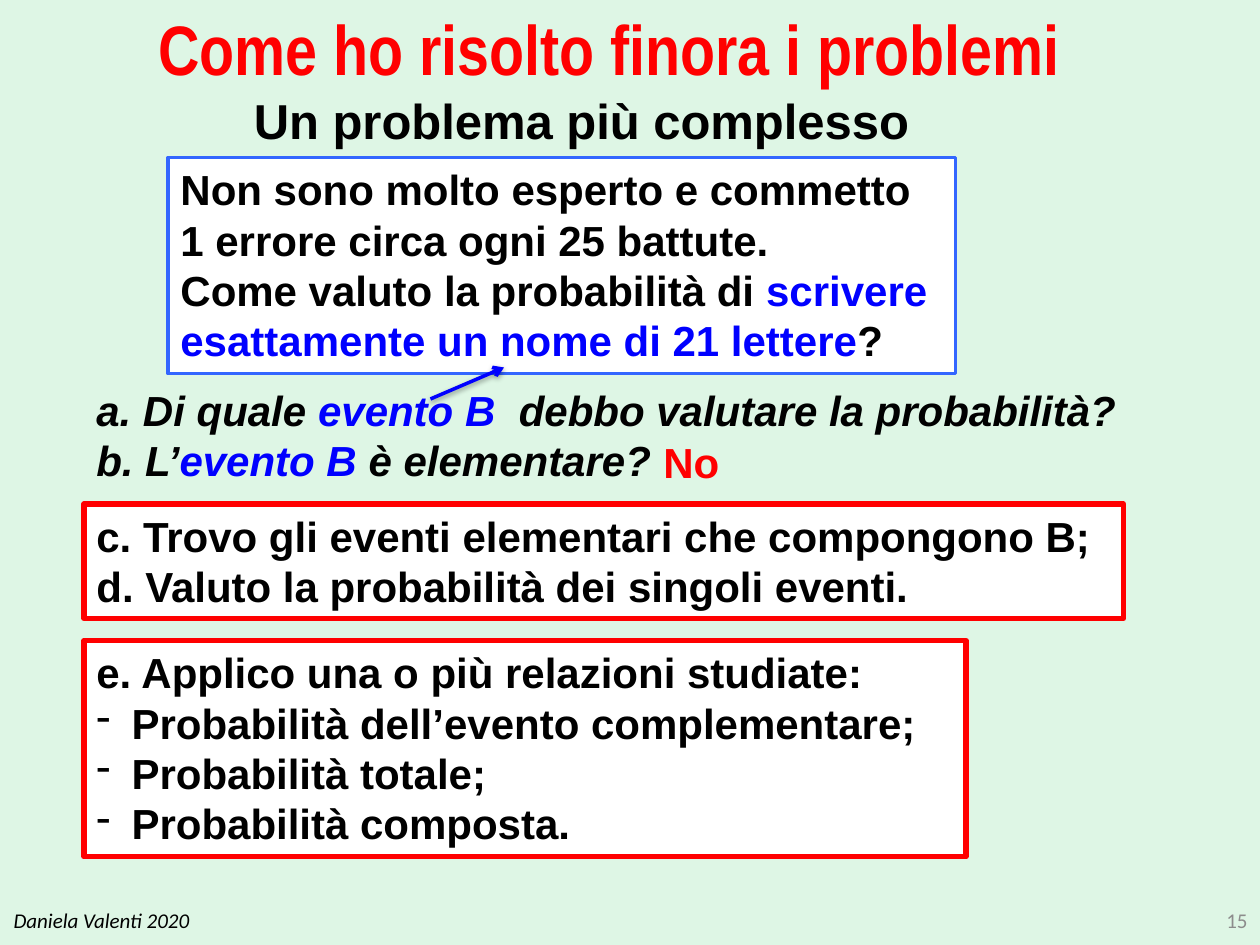
"""Build the slide on how probability problems have been solved so far."""
from lxml import etree
from pptx import Presentation
from pptx import util as u
from pptx.dml.color import RGBColor
from pptx.enum import shapes, text
from pptx.oxml import parse_xml
from pptx.oxml.ns import nsdecls, qn

BLACK, RED, BLUE, WHITE = "000000", "FF0000", "0000FF", "FFFFFF"
BOLD = {"name": "Arial", "size": 24, "bold": True}
ITALIC = {**BOLD, "italic": True}
SMALL = {"name": "Calibri", "size": 12}
HANGING, BULLET = (36, -36, None), (13.5, -13.5, "-")
CENTER, RIGHT = text.PP_ALIGN.CENTER, text.PP_ALIGN.RIGHT
MIDDLE = text.MSO_ANCHOR.MIDDLE

TITLE = {
    "at": (18, 0, 660, 54), "align": CENTER, "anchor": MIDDLE,
    "font": {"name": "Arial Narrow", "size": 40, "bold": True},
    "paras": [[("Come ho risolto finora i problemi", RED)]],
}
BOXES = [
    {"at": (0, 511, 116, 29), "align": CENTER, "anchor": MIDDLE,
     "font": {**SMALL, "italic": True},
     "paras": [[("Daniela Valenti 2020", BLACK)]]},
    {"at": (684, 511, 36, 29), "align": RIGHT, "anchor": MIDDLE,
     "font": SMALL, "paras": [[("15", "8C8C8C")]]},
    {"at": (48, 216, 618, 65.4), "font": ITALIC, "indents": [HANGING] * 2,
     "paras": [
         [("a. Di quale ", BLACK), ("evento B ", BLUE),
          (" debbo valutare la probabilità?", BLACK)],
         [("b. L’", BLACK), ("evento B", BLUE), (" è elementare?", BLACK)]]},
    {"at": (372, 246, 48, 36), "font": BOLD, "paras": [[("No", RED)]]},
    {"at": (48, 288, 594, 65.4), "font": BOLD, "line": (RED, 3),
     "paras": [
         [("c. Trovo gli eventi elementari che compongono B;", BLACK)],
         [("d. Valuto la probabilità dei singoli eventi.", BLACK)]]},
    {"at": (48, 366, 504, 123.6), "font": BOLD, "line": (RED, 3),
     "indents": [None] + [BULLET] * 3,
     "paras": [
         [("e. Applico una o più relazioni studiate:", BLACK)],
         [(" Probabilità dell’evento complementare;", BLACK)],
         [(" Probabilità totale;", BLACK)],
         [(" Probabilità composta.", BLACK)]]},
    {"at": (138, 48, 393, 41.2), "font": {**BOLD, "size": 28}, "wrap": False,
     "paras": [[("Un problema più complesso", BLACK)]]},
    {"at": (96, 90, 450, 123.6), "font": BOLD, "line": ("3366FF", 2),
     "paras": [
         [("Non sono molto esperto e commetto 1 errore circa ogni 25 battute.",
           BLACK)],
         [("Come valuto la probabilità di ", BLACK),
          ("scrivere esattamente un nome di 21 lettere", BLUE),
          ("?", BLACK)]]},
]
ARROW = (246, 228, 288, 210)
SHADOW = (
    f'<a:effectLst {nsdecls("a")}><a:outerShdw blurRad="{u.Pt(3.1)}" '
    f'dist="{u.Pt(1.6)}" dir="5400000" rotWithShape="0">'
    '<a:srgbClr val="000000"><a:alpha val="38000"/></a:srgbClr>'
    '</a:outerShdw></a:effectLst>')


def color(value):
    return RGBColor.from_string(value)


def points(values):
    return [u.Pt(value) for value in values]


def set_indent(para, margin, first, bullet):
    properties = para._p.get_or_add_pPr()
    properties.set("marL", str(u.Pt(margin)))
    properties.set("indent", str(u.Pt(first)))
    if bullet:
        etree.SubElement(properties, qn("a:buFontTx"))
        etree.SubElement(properties, qn("a:buChar")).set("char", bullet)


def write(box, item):
    frame = box.text_frame
    frame.auto_size = text.MSO_AUTO_SIZE.NONE
    frame.word_wrap = item.get("wrap", True)
    frame.vertical_anchor = item.get("anchor", text.MSO_ANCHOR.TOP)
    indents = item.get("indents", [None] * len(item["paras"]))
    for index, (spans, indent) in enumerate(zip(item["paras"], indents)):
        para = frame.add_paragraph() if index else frame.paragraphs[0]
        para.alignment = item.get("align", text.PP_ALIGN.LEFT)
        if indent:
            set_indent(para, *indent)
        for words, shade in spans:
            span = para.add_run()
            span.text = words
            for key, value in item["font"].items():
                setattr(span.font, key, u.Pt(value) if key == "size" else value)
            span.font.color.rgb = color(shade)


def add_box(page, item):
    place = points(item["at"])
    if "line" in item:
        box = page.shapes.add_shape(shapes.MSO_SHAPE.RECTANGLE, *place)
        box.shadow.inherit = False
        box.fill.solid()
        box.fill.fore_color.rgb = color(WHITE)
        shade, width = item["line"]
        box.line.color.rgb = color(shade)
        box.line.width = u.Pt(width)
    else:
        box = page.shapes.add_textbox(*place)
    write(box, item)


def add_arrow(page):
    arrow = page.shapes.add_connector(
        shapes.MSO_CONNECTOR.STRAIGHT, *points(ARROW))
    arrow.line.color.rgb = color(BLUE)
    arrow.line.width = u.Pt(2)
    line = arrow.line._get_or_add_ln()
    etree.SubElement(line, qn("a:tailEnd")).set("type", "arrow")
    arrow._element.spPr.append(parse_xml(SHADOW))


def main():
    deck = Presentation()
    deck.slide_width, deck.slide_height = points((720, 540))
    page = deck.slides.add_slide(deck.slide_layouts.get_by_name("Title Only"))
    page.background.fill.solid()
    page.background.fill.fore_color.rgb = color("DEF6E5")
    title = page.shapes.title
    title.left, title.top, title.width, title.height = points(TITLE["at"])
    write(title, TITLE)
    for item in BOXES:
        add_box(page, item)
    add_arrow(page)
    deck.save("out.pptx")


if __name__ == "__main__":
    main()
